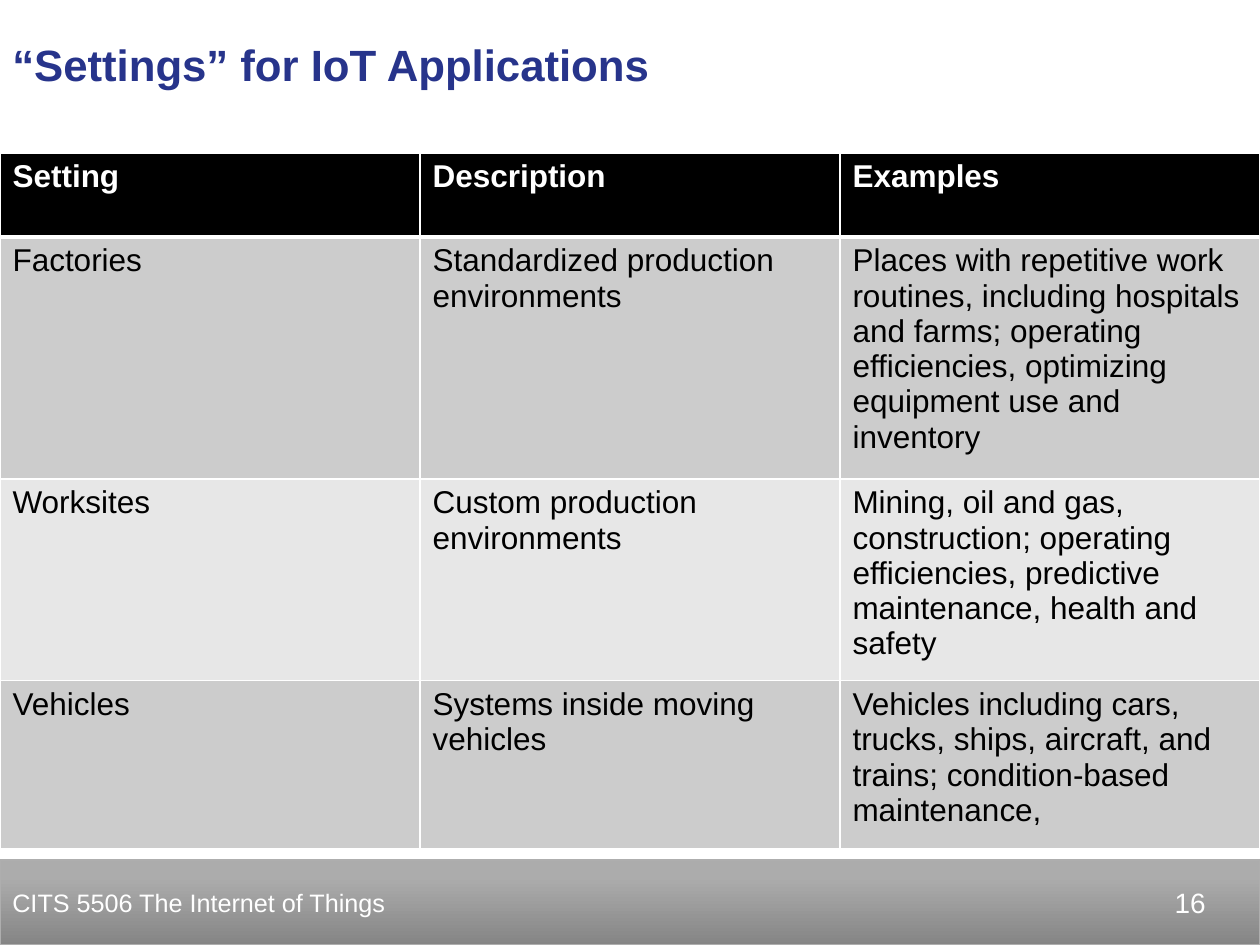
from typing import NamedTuple

from lxml.etree import SubElement
from pptx import Presentation
from pptx.dml.color import RGBColor
from pptx.enum.shapes import MSO_SHAPE as Shape
from pptx.enum.text import MSO_ANCHOR as Anchor, PP_ALIGN as Align
from pptx.oxml.ns import qn
from pptx.util import Emu, Pt

SCALE = 914400 / 126
WHITE, BLACK = "FFFFFF", "000000"


class Box(NamedTuple):
    x: int
    y: int
    w: int
    h: int


class Style(NamedTuple):
    size: float
    color: str
    bold: bool = False


class Label(NamedTuple):
    text: str
    box: Box
    style: Style
    anchor: Anchor = Anchor.MIDDLE
    align: Align = Align.LEFT


class Row(NamedTuple):
    height: int
    fill: str
    style: Style
    texts: tuple[str, str, str]


def px(n: int) -> Emu:
    return Emu(round(n * SCALE))


def rgb(code: str) -> RGBColor:
    return RGBColor.from_string(code)


def write(frame, text: str, style: Style, align: Align = Align.LEFT) -> None:
    frame.word_wrap = True
    para = frame.paragraphs[0]
    para.alignment = align
    run = para.add_run()
    run.text = text
    font = run.font
    font.name, font.size, font.bold = "Arial", Pt(style.size), style.bold
    font.color.rgb = rgb(style.color)


def panel(slide, box: Box):
    shape = slide.shapes.add_shape(Shape.RECTANGLE, *map(px, box))
    shape.shadow.inherit = False
    shape.fill.solid()
    shape.fill.fore_color.rgb = rgb(WHITE)
    shape.line.fill.background()
    return shape


def footer(slide, box: Box) -> None:
    bar = panel(slide, box)
    bar.fill.gradient()
    bar.fill.gradient_angle = 90
    stops = ((0, "858585"), (0.8, "ACACAC"))
    for stop, (place, color) in zip(bar.fill.gradient_stops, stops):
        stop.position = place
        stop.color.rgb = rgb(color)
    bar.line.color.rgb = rgb("AEAEAE")
    bar.line.width = Pt(0.75)


def label(slide, item: Label) -> None:
    frame = slide.shapes.add_textbox(*map(px, item.box)).text_frame
    frame.vertical_anchor = item.anchor
    write(frame, item.text, item.style, item.align)


def border(cell, top: int, bottom: int) -> None:
    props = cell._tc.get_or_add_tcPr()
    for side, width in (("L", 1), ("R", 1), ("T", top), ("B", bottom)):
        line = SubElement(props, qn(f"a:ln{side}"), w=str(Pt(width)))
        fill = SubElement(line, qn("a:solidFill"))
        SubElement(fill, qn("a:srgbClr"), val=WHITE)


def grid(slide, box: Box, rows: tuple[Row, ...]) -> None:
    count = len(rows[0].texts)
    table = slide.shapes.add_table(len(rows), count, *map(px, box)).table
    for col in table.columns:
        col.width = px(box.w // count)
    for i, row in enumerate(rows):
        table.rows[i].height = px(row.height)
        for j, text in enumerate(row.texts):
            cell = table.cell(i, j)
            # The rule under the header is thicker
            border(cell, 3 if i == 1 else 1, 3 if i == 0 else 1)
            cell.fill.solid()
            cell.fill.fore_color.rgb = rgb(row.fill)
            write(cell.text_frame, text, row.style)


HEAD, BODY = Style(18, WHITE, True), Style(18, BLACK)
DARK, LIGHT = "CCCCCC", "E7E7E7"
ROWS = (
    Row(84, BLACK, HEAD, ("Setting", "Description", "Examples")),
    Row(242, DARK, BODY, (
        "Factories", "Standardized production environments",
        "Places with repetitive work routines, including hospitals and farms; "
        "operating efficiencies, optimizing equipment use and inventory")),
    Row(189, LIGHT, BODY, (
        "Worksites", "Custom production environments",
        "Mining, oil and gas, construction; operating efficiencies, "
        "predictive maintenance, health and safety")),
    Row(168, DARK, BODY, (
        "Vehicles", "Systems inside moving vehicles",
        "Vehicles including cars, trucks, ships, aircraft, and trains; "
        "condition-based maintenance,")),
)
BAR = Box(0, 860, 1260, 85)
LABELS = (
    Label("CITS 5506 The Internet of Things", BAR, Style(14.4, WHITE)),
    Label("“Settings” for IoT Applications", Box(0, 32, 955, 116),
          Style(25, "27348B", True), Anchor.TOP),
    Label("16", Box(924, 860, 294, 85), Style(16, WHITE), align=Align.RIGHT),
)


def main() -> None:
    deck = Presentation()
    deck.slide_width, deck.slide_height = px(1260), px(945)
    slide = deck.slides.add_slide(deck.slide_layouts[6])

    # Background and panels
    slide.background.fill.solid()
    slide.background.fill.fore_color.rgb = rgb("999999")
    panel(slide, Box(-1, 0, 1261, 155))
    panel(slide, Box(0, 157, 1260, 749))
    footer(slide, BAR)

    # Title, footer text and page number
    for item in LABELS:
        label(slide, item)

    # Table of settings
    grid(slide, Box(0, 153, 1260, sum(row.height for row in ROWS)), ROWS)
    deck.save("out.pptx")


if __name__ == "__main__":
    main()
